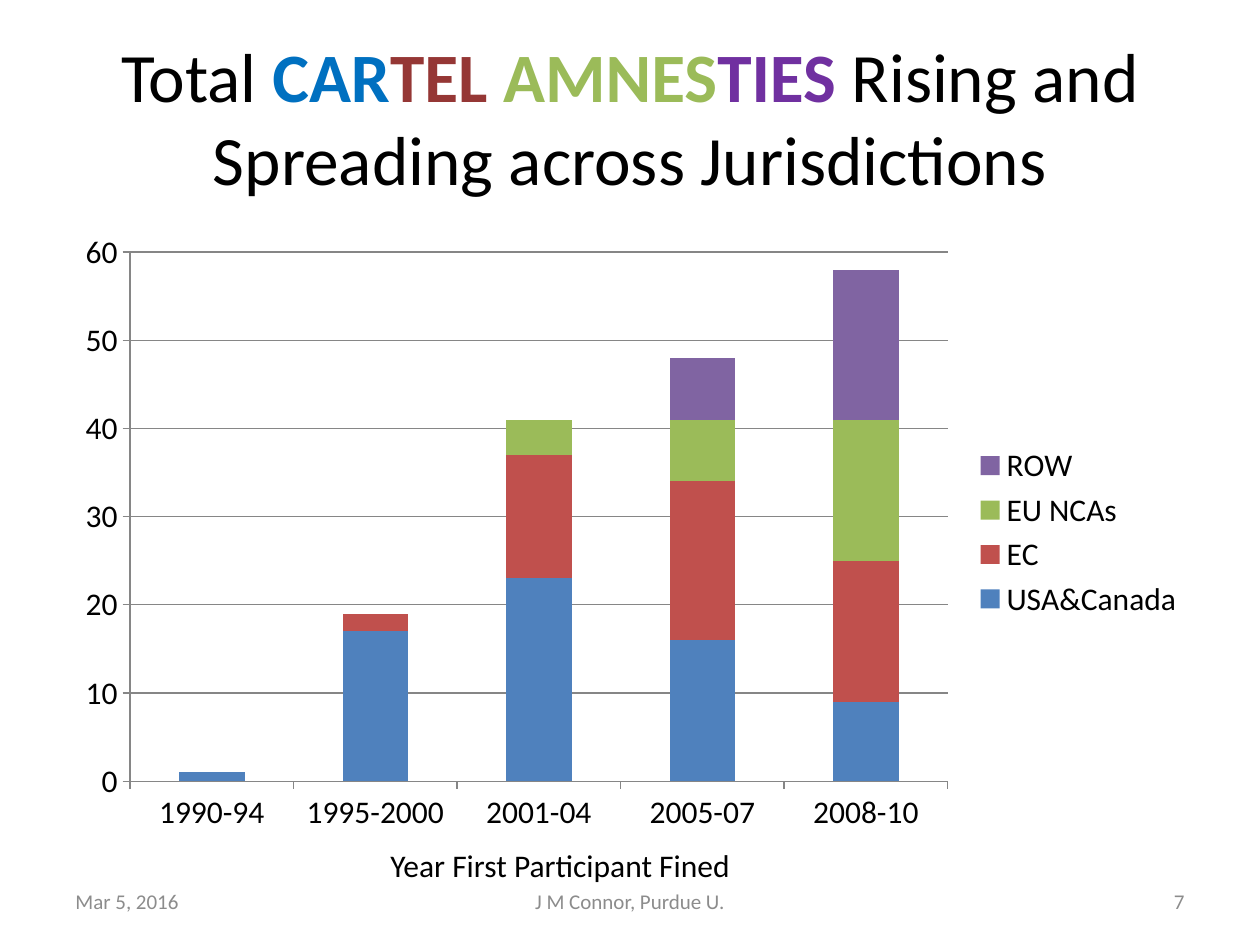
from dataclasses import dataclass

from pptx import Presentation
from pptx.chart.data import CategoryChartData
from pptx.dml.color import RGBColor
from pptx.enum.chart import XL_CHART_TYPE, XL_LEGEND_POSITION, XL_TICK_MARK
from pptx.enum.text import MSO_ANCHOR, PP_ALIGN
from pptx.slide import Slide
from pptx.util import Pt

FONT = "Calibri"
COLORS = {
    "text": "000000", "footer": "8C8C8C", "axis": "868686",
    "title blue": "0070C0", "title red": "953735",
    "title green": "9BBB59", "title purple": "7030A0",
    "USA&Canada": "4F81BD", "EC": "C0504D", "EU NCAs": "9BBB59", "ROW": "8064A2",
}
PERIODS = ["1990-94", "1995-2000", "2001-04", "2005-07", "2008-10"]
AMNESTIES = {
    "USA&Canada": (1, 17, 23, 16, 9),
    "EC": (0, 2, 14, 18, 16),
    "EU NCAs": (0, 0, 4, 7, 16),
    "ROW": (0, 0, 0, 7, 17),
}


@dataclass
class Span:
    text: str
    color: str = "text"
    bold: bool = False


@dataclass
class Label:
    spans: list[Span]
    left: float
    top: float
    width: float
    height: float
    size: float
    align: PP_ALIGN = PP_ALIGN.LEFT
    anchor: MSO_ANCHOR = MSO_ANCHOR.MIDDLE


def rgb(name: str) -> RGBColor:
    return RGBColor.from_string(COLORS[name])


def draw_label(slide: Slide, label: Label) -> None:
    box = slide.shapes.add_textbox(
        Pt(label.left), Pt(label.top), Pt(label.width), Pt(label.height))
    frame = box.text_frame
    frame.word_wrap = True
    frame.vertical_anchor = label.anchor
    paragraph = frame.paragraphs[0]
    paragraph.alignment = label.align
    for span in label.spans:
        run = paragraph.add_run()
        run.text = span.text
        run.font.name = FONT
        run.font.size = Pt(label.size)
        run.font.bold = span.bold
        run.font.color.rgb = rgb(span.color)


def draw_chart(slide: Slide) -> None:
    data = CategoryChartData()
    data.categories = PERIODS
    for jurisdiction, counts in AMNESTIES.items():
        data.add_series(jurisdiction, counts)
    chart = slide.shapes.add_chart(
        XL_CHART_TYPE.COLUMN_STACKED, Pt(36), Pt(126), Pt(648), Pt(356.4), data).chart
    chart.has_title = False
    chart.font.name = FONT
    chart.font.size = Pt(18)
    chart.font.color.rgb = rgb("text")

    # Legend
    chart.has_legend = True
    chart.legend.position = XL_LEGEND_POSITION.RIGHT
    chart.legend.include_in_layout = False

    # Columns
    plot = chart.plots[0]
    plot.gap_width = 150
    plot.overlap = 100
    plot.vary_by_categories = False
    for series in plot.series:
        series.format.fill.solid()
        series.format.fill.fore_color.rgb = rgb(series.name)

    # Axes and gridlines
    counts_axis = chart.value_axis
    counts_axis.minimum_scale = 0
    counts_axis.maximum_scale = 60
    counts_axis.major_unit = 10
    counts_axis.has_major_gridlines = True
    for axis in (chart.category_axis, counts_axis):
        axis.major_tick_mark = XL_TICK_MARK.OUTSIDE
    for line in (chart.category_axis.format.line, counts_axis.format.line,
                 counts_axis.major_gridlines.format.line):
        line.color.rgb = rgb("axis")
        line.width = Pt(0.75)


def main() -> None:
    presentation = Presentation()
    presentation.slide_width, presentation.slide_height = Pt(720), Pt(540)
    slide = presentation.slides.add_slide(presentation.slide_layouts[6])

    # Title
    draw_label(slide, Label([
        Span("Total "),
        Span("CAR", "title blue", True),
        Span("TEL ", "title red", True),
        Span("AMNES", "title green", True),
        Span("TIES ", "title purple", True),
        Span("Rising and Spreading across Jurisdictions"),
    ], 36, 21.6, 648, 90, 39.6, PP_ALIGN.CENTER))

    draw_chart(slide)

    # Footer: date, author, slide number
    for text, left, width, align in (
        ("Mar 5, 2016", 36, 168, PP_ALIGN.LEFT),
        ("J M Connor, Purdue U.", 246, 228, PP_ALIGN.CENTER),
        ("7", 516, 168, PP_ALIGN.RIGHT),
    ):
        draw_label(slide, Label(
            [Span(text, "footer")], left, 500.5, width, 28.75, 12, align))

    # Caption of the category axis
    draw_label(slide, Label([Span("Year First Participant Fined")],
                            216, 480, 270, 29, 18, anchor=MSO_ANCHOR.TOP))

    presentation.save("out.pptx")


if __name__ == "__main__":
    main()
